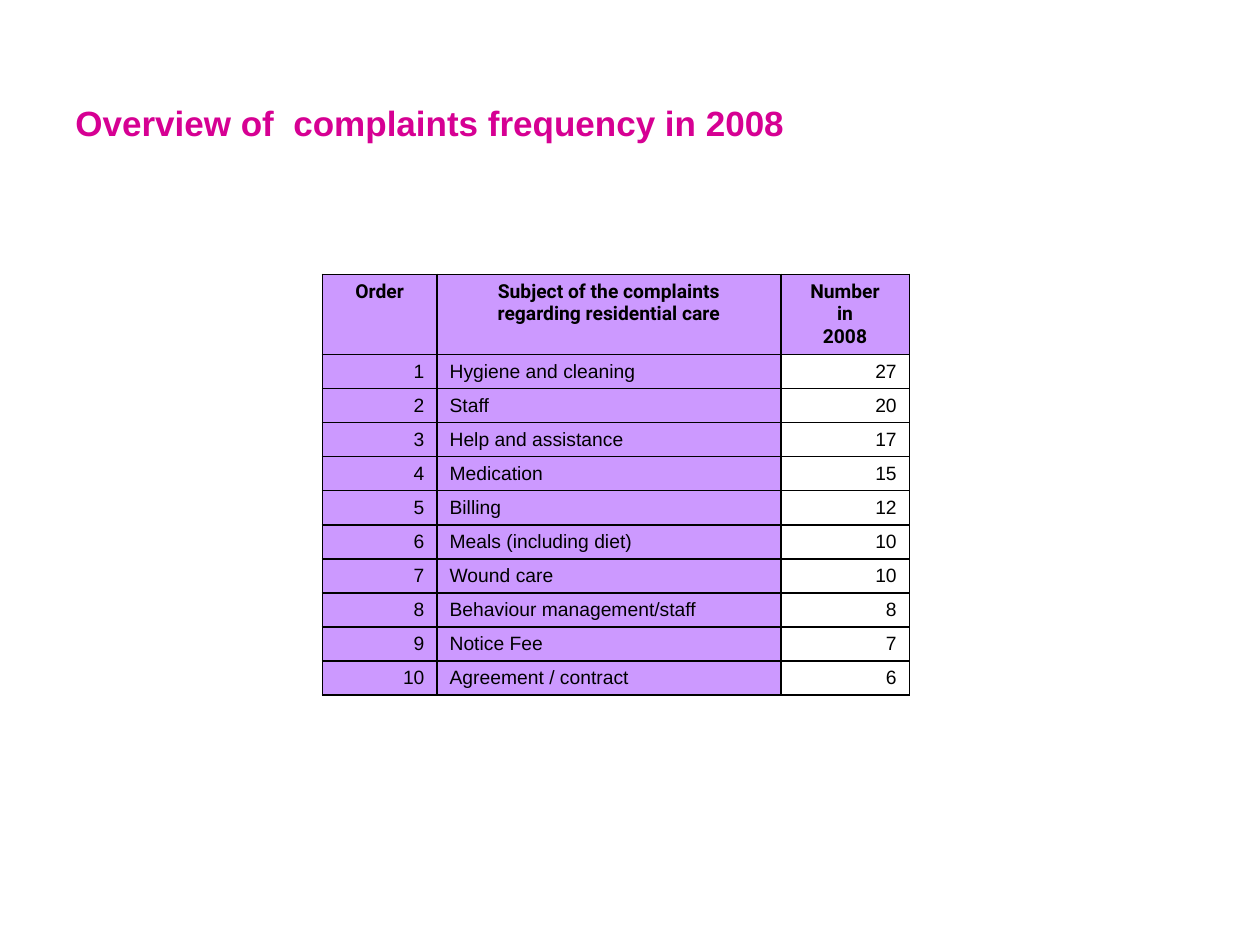
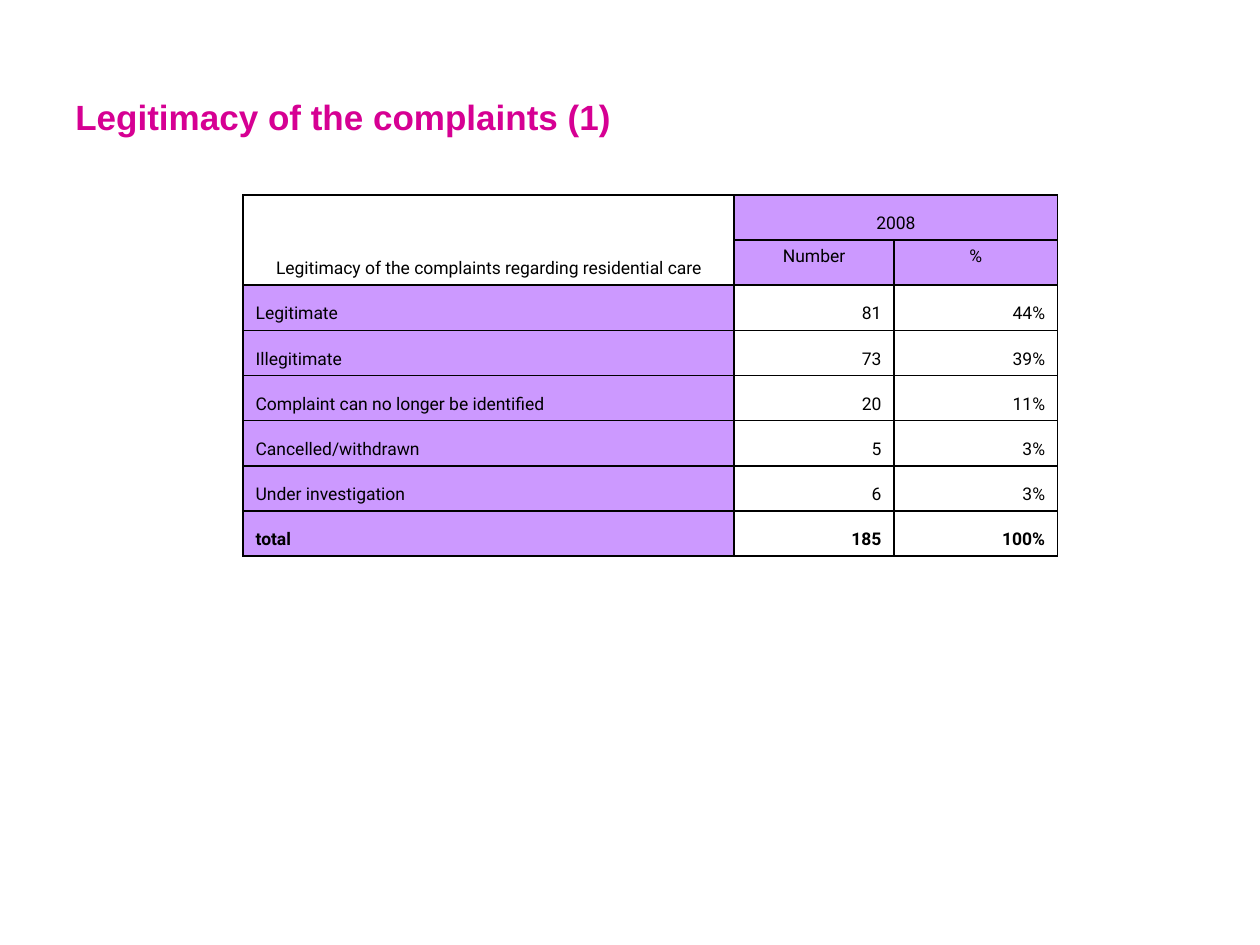
from dataclasses import dataclass

from lxml import etree
from pptx import Presentation
from pptx.dml.color import RGBColor
from pptx.enum.text import MSO_ANCHOR, PP_ALIGN
from pptx.oxml.ns import qn
from pptx.util import Cm, Pt

LEFT, CENTER, RIGHT = PP_ALIGN.LEFT, PP_ALIGN.CENTER, PP_ALIGN.RIGHT
TOP, MIDDLE, BOTTOM = MSO_ANCHOR.TOP, MSO_ANCHOR.MIDDLE, MSO_ANCHOR.BOTTOM


@dataclass(frozen=True)
class Theme:
    title_color: str = "D60093"
    text_color: str = "000000"
    border_color: str = "000000"
    label_fill: str = "CC99FF"
    title_font: str = "Arial"
    body_font: str = "Arial"
    header_font: str = "Roboto"
    title_size: int = 20
    frequency_size: int = 11
    legitimacy_size: int = 10
    border_width: int = 1


THEME = Theme()

FREQUENCY_HEADER = [
    "Order",
    "Subject of the complaints\nregarding residential care",
    "Number\nin\n2008",
]
FREQUENCIES = [
    ("Hygiene and cleaning", 27),
    ("Staff", 20),
    ("Help and assistance", 17),
    ("Medication", 15),
    ("Billing", 12),
    ("Meals (including diet)", 10),
    ("Wound care", 10),
    ("Behaviour management/staff", 8),
    ("Notice Fee", 7),
    ("Agreement / contract", 6),
]
LEGITIMACY = [
    ("Legitimate", "81", "44%"),
    ("Illegitimate", "73", "39%"),
    ("Complaint can no longer be identified", "20", "11%"),
    ("Cancelled/withdrawn", "5", "3%"),
    ("Under investigation", "6", "3%"),
    ("total", "185", "100%"),
]


def apply_format(target, values):
    for name, value in values.items():
        setattr(target, name, value)


def write_text(text_frame, text, alignment, color, font_format):
    """Write one paragraph for each line of the text."""
    text_frame.text = text
    for paragraph in text_frame.paragraphs:
        paragraph.alignment = alignment
        apply_format(paragraph.font, font_format)
        paragraph.font.color.rgb = RGBColor.from_string(color)


def add_title(slide, text, box):
    shape = slide.shapes.add_textbox(*(Cm(length) for length in box))
    apply_format(shape.text_frame,
                 {"word_wrap": True, "vertical_anchor": MIDDLE})
    write_text(shape.text_frame, text, LEFT, THEME.title_color,
               {"name": THEME.title_font, "size": Pt(THEME.title_size),
                "bold": True})


def add_borders(cell):
    properties = cell._tc.get_or_add_tcPr()
    for side in ("lnL", "lnR", "lnT", "lnB"):
        line = etree.SubElement(properties, qn(f"a:{side}"),
                                w=str(Pt(THEME.border_width)))
        fill = etree.SubElement(line, qn("a:solidFill"))
        etree.SubElement(fill, qn("a:srgbClr"), val=THEME.border_color)


def add_grid(slide, position, column_widths, row_heights):
    """Add a bordered table without style bands."""
    left, top = position
    table = slide.shapes.add_table(
        len(row_heights), len(column_widths), Cm(left), Cm(top),
        Cm(sum(column_widths)), Cm(sum(row_heights))).table
    apply_format(table, {"first_row": False, "horz_banding": False})
    for column, width in zip(table.columns, column_widths):
        column.width = Cm(width)
    for row, height in zip(table.rows, row_heights):
        row.height = Cm(height)
    for cell in table.iter_cells():
        add_borders(cell)
        cell.fill.background()
    return table


def fill_cell(cell, text, alignment, anchor, font_format, shaded=True):
    if shaded:
        cell.fill.solid()
        cell.fill.fore_color.rgb = RGBColor.from_string(THEME.label_fill)
    cell.vertical_anchor = anchor
    write_text(cell.text_frame, text, alignment, THEME.text_color, font_format)


def add_frequency_table(slide, position):
    table = add_grid(slide, position, [2.31, 6.93, 2.59],
                     [1.5] + [0.66] * len(FREQUENCIES))
    size = Pt(THEME.frequency_size)
    header_format = {"name": THEME.header_font, "size": size, "bold": True}
    body_format = {"name": THEME.body_font, "size": size, "bold": False}

    # Header row
    for column, text in enumerate(FREQUENCY_HEADER):
        fill_cell(table.cell(0, column), text, CENTER, TOP, header_format)

    # Ranked subjects
    for order, (subject, number) in enumerate(FREQUENCIES, start=1):
        order_cell, subject_cell, number_cell = table.rows[order].cells
        fill_cell(order_cell, str(order), RIGHT, BOTTOM, body_format)
        fill_cell(subject_cell, subject, LEFT, BOTTOM, body_format)
        fill_cell(number_cell, str(number), RIGHT, BOTTOM, body_format,
                  shaded=False)


def add_legitimacy_table(slide, position):
    header_rows = 2
    table = add_grid(slide, position, [9.9, 3.22, 3.3],
                     [0.91] * (header_rows + len(LEGITIMACY)))
    text_format = {"name": THEME.header_font,
                   "size": Pt(THEME.legitimacy_size), "bold": False}

    # Two-level header
    table.cell(0, 0).merge(table.cell(1, 0))
    table.cell(0, 1).merge(table.cell(0, 2))
    fill_cell(table.cell(0, 0),
              "Legitimacy of the complaints regarding residential care",
              CENTER, BOTTOM, text_format, shaded=False)
    fill_cell(table.cell(0, 1), "2008", CENTER, BOTTOM, text_format)
    for column, text in enumerate(("Number", "%"), start=1):
        fill_cell(table.cell(1, column), text, CENTER, TOP, text_format)

    # Outcomes, with the total in bold
    for row, outcome in enumerate(LEGITIMACY, start=header_rows):
        row_format = {**text_format, "bold": outcome[0] == "total"}
        for column, text in enumerate(outcome):
            is_label = column == 0
            fill_cell(table.cell(row, column), text,
                      LEFT if is_label else RIGHT, BOTTOM, row_format,
                      shaded=is_label)


def main():
    presentation = Presentation()
    presentation.slide_width, presentation.slide_height = Cm(25.4), Cm(19.05)
    blank_layout = presentation.slide_layouts[6]

    # Complaints by frequency
    slide = presentation.slides.add_slide(blank_layout)
    add_frequency_table(slide, (6.5, 5.53))
    add_title(slide, "Overview of  complaints frequency in 2008",
              (1.27, 0.88, 22.86, 3.18))

    # Complaints by legitimacy
    slide = presentation.slides.add_slide(blank_layout)
    add_title(slide, "Legitimacy of the complaints (1)",
              (1.27, 0.76, 22.86, 3.18))
    add_legitimacy_table(slide, (4.9, 3.93))

    presentation.save("out.pptx")


if __name__ == "__main__":
    main()
